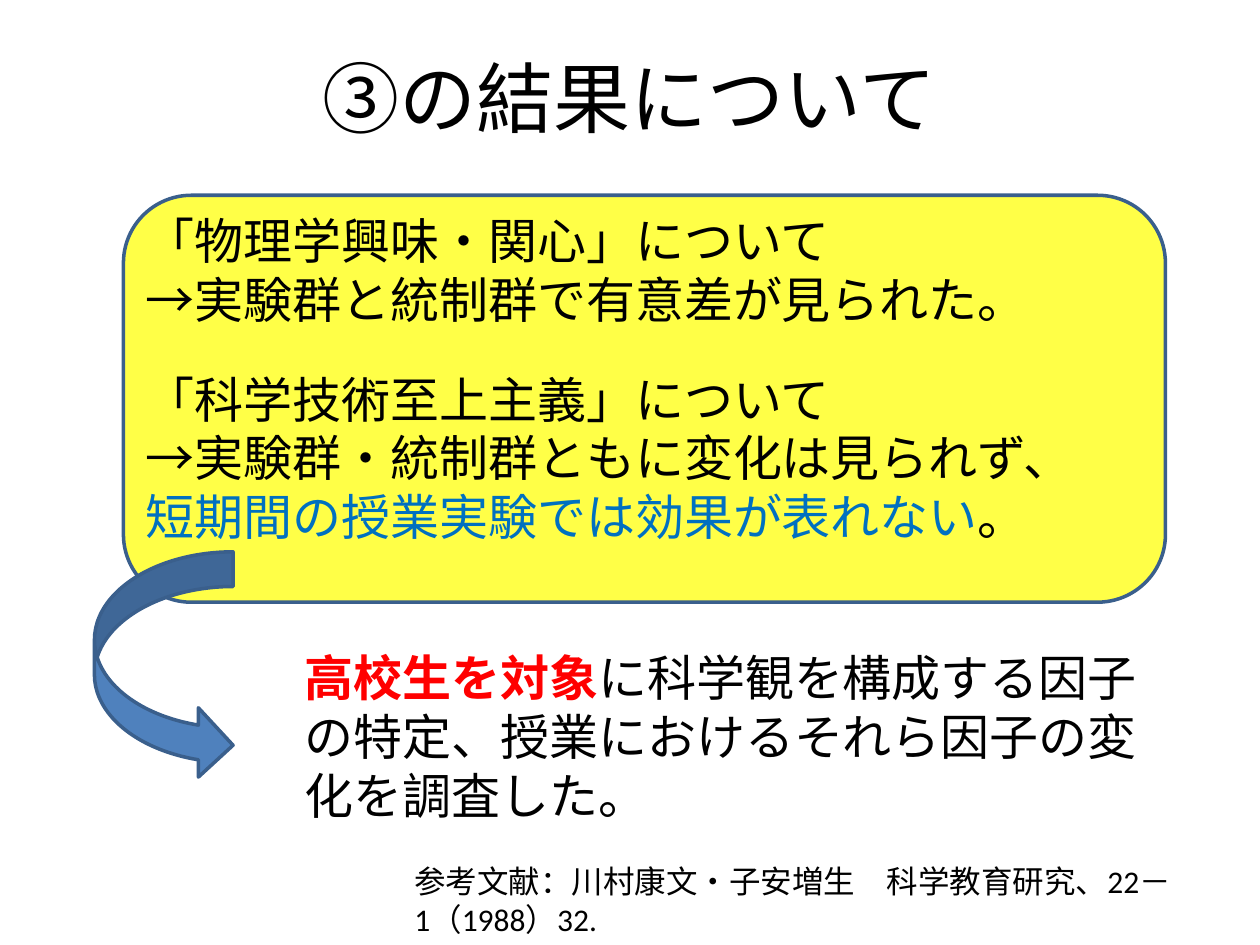
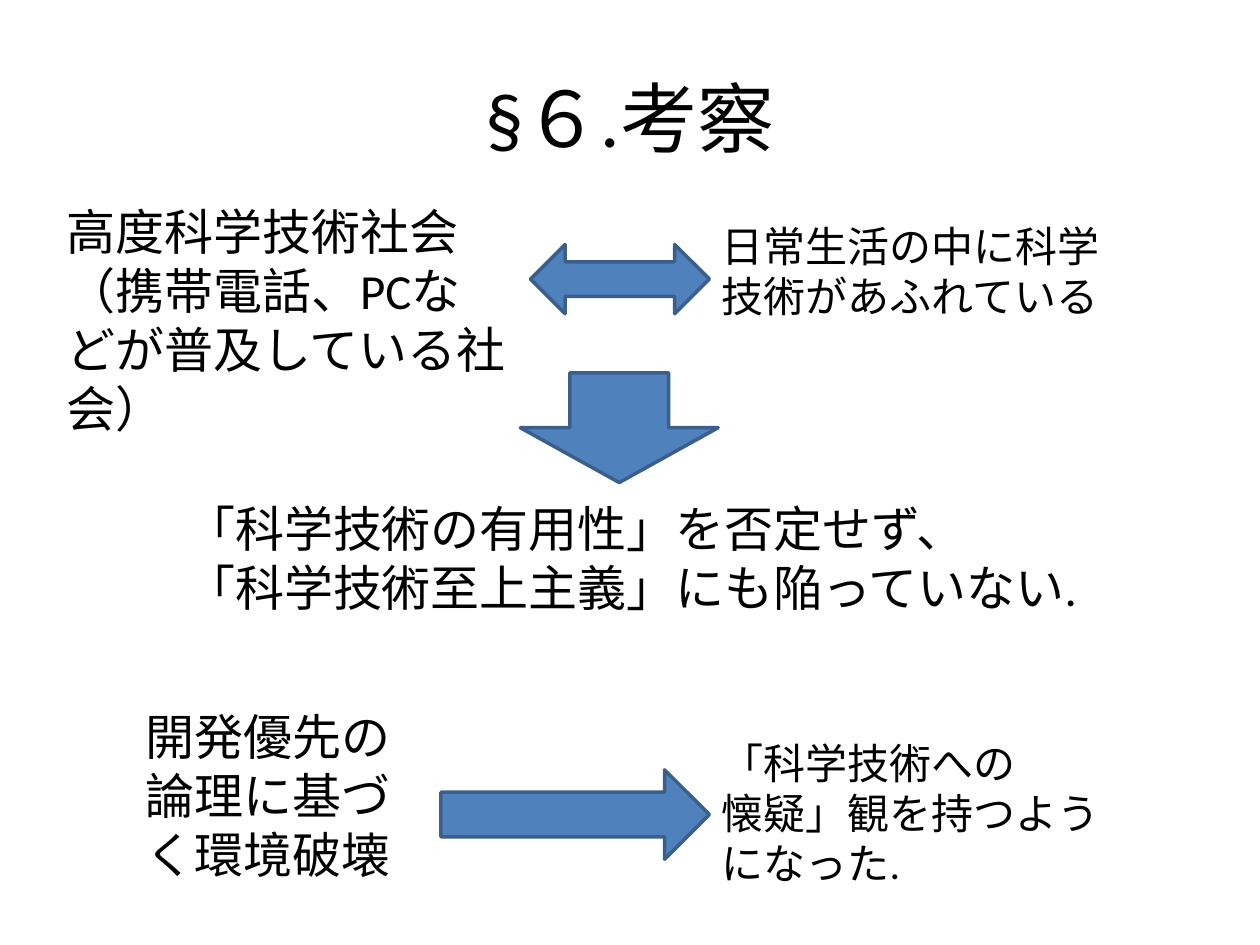
"""Build two slides on the survey results and their discussion."""
from typing import NamedTuple, Optional

from lxml.etree import SubElement
from pptx import Presentation
from pptx.dml.color import RGBColor
from pptx.enum.shapes import MSO_SHAPE as SHAPE
from pptx.enum.text import MSO_ANCHOR as ANCHOR, MSO_AUTO_SIZE as AUTO, PP_ALIGN as ALIGN
from pptx.oxml.ns import qn
from pptx.slide import Slide
from pptx.util import Inches, Pt

BLACK = RGBColor(0x00, 0x00, 0x00)
YELLOW = RGBColor(0xFF, 0xFF, 0x00)
RED = RGBColor(0xFF, 0x00, 0x00)
BLUE = RGBColor(0x00, 0x70, 0xC0)
ARROW_FILL = RGBColor(0x4F, 0x81, 0xBD)
OUTLINE = RGBColor(0x3A, 0x5F, 0x8C)

FONT = "Calibri"
TITLE_SIZE, BODY_SIZE, SIDE_SIZE, NOTE_SIZE = 44, 28, 24, 18
COLUMNS, ROWS = 100, 75
SLIDE_W, SLIDE_H = Inches(10), Inches(7.5)


class Box(NamedTuple):
    """Place on the grid, in columns and rows."""
    col: float
    row: float
    cols: float
    rows: float

    def emu(self) -> tuple[int, int, int, int]:
        """Return left, top, width and height as slide lengths."""
        cw, rh = SLIDE_W / COLUMNS, SLIDE_H / ROWS
        return (round(self.col * cw), round(self.row * rh),
                round(self.cols * cw), round(self.rows * rh))


class Span(NamedTuple):
    """Stretch of text in one style."""
    text: str
    color: RGBColor = BLACK
    bold: bool = False


class Block(NamedTuple):
    """Text box holding paragraphs of spans."""
    box: Box
    paragraphs: list[list[Span]]
    size: int = BODY_SIZE


class Figure(NamedTuple):
    """Outlined preset shape."""
    kind: SHAPE
    box: Box
    fill: RGBColor = ARROW_FILL
    opacity: Optional[int] = None


class Page(NamedTuple):
    """Title and the items below it, from back to front."""
    title: str
    title_box: Box
    items: list[Block | Figure]


def plain(*lines: str) -> list[list[Span]]:
    """Turn each line into a paragraph in the default style."""
    return [[Span(line)] for line in lines]


PAGES = [
    Page("③の結果について", Box(5, 3, 90, 9.3), [
        Figure(SHAPE.ROUNDED_RECTANGLE, Box(9.8, 15.5, 82.7, 32.3), YELLOW, 72),
        Block(Box(10.6, 16.2, 76.4, 10.4),
              plain("「物理学興味・関心」について", "→実験群と統制群で有意差が見られた。")),
        Block(Box(10.6, 28.8, 76.4, 15.1), [
            [Span("「科学技術至上主義」について")],
            [Span("→実験群・統制群ともに変化は見られず、"),
             Span("短期間の授業実験では効果が表れない", BLUE), Span("。")],
        ]),
        Block(Box(31.9, 67.9, 63, 7.1),
              plain("参考文献：川村康文・子安増生　科学教育研究、22－1（1988）32."), NOTE_SIZE),
        Figure(SHAPE.CURVED_RIGHT_ARROW, Box(7.5, 43.8, 11, 18.1)),
        Block(Box(23.2, 50.9, 68.5, 15.1), [
            [Span("高校生を対象", RED, True),
             Span("に科学観を構成する因子の特定、授業におけるそれら因子の変化を調査した。")],
        ]),
    ]),
    Page("§６.考察", Box(5, 3, 90, 12.5), [
        Block(Box(4.3, 15.5, 37, 15.1),
              plain("高度科学技術社会（携帯電話、PCなどが普及している社会）")),
        Block(Box(56.3, 17, 33.9, 9.1),
              plain("日常生活の中に科学技術があふれている"), SIDE_SIZE),
        Block(Box(13.8, 39.1, 74.8, 10.4),
              plain("「科学技術の有用性」を否定せず、", "「科学技術至上主義」にも陥っていない.")),
        Figure(SHAPE.LEFT_RIGHT_ARROW, Box(42.1, 19.4, 14.2, 5.5)),
        Figure(SHAPE.DOWN_ARROW, Box(41.3, 29.6, 15.7, 8.7)),
        Block(Box(10.6, 55.6, 24.4, 15.1), plain("開発優先の論理に基づく環境破壊")),
        Figure(SHAPE.RIGHT_ARROW, Box(35, 61.1, 21.3, 7.1)),
        Block(Box(56.3, 58, 34.6, 13.1),
              plain("「科学技術への", "懐疑」観を持つようになった."), SIDE_SIZE),
    ]),
]


def draw_block(s: Slide, block: Block):
    """Add a wrapping text box and return its text frame."""
    tf = s.shapes.add_textbox(*block.box.emu()).text_frame
    tf.word_wrap = True
    tf.auto_size = AUTO.SHAPE_TO_FIT_TEXT
    for i, spans in enumerate(block.paragraphs):
        p = tf.add_paragraph() if i else tf.paragraphs[0]
        for span in spans:
            r = p.add_run()
            r.text = span.text
            r.font.name = FONT
            r.font.size = Pt(block.size)
            r.font.bold = span.bold
            r.font.color.rgb = span.color
    return tf


def draw_title(s: Slide, page: Page) -> None:
    """Add the centred title."""
    tf = draw_block(s, Block(page.title_box, plain(page.title), TITLE_SIZE))
    tf.auto_size = AUTO.NONE
    tf.vertical_anchor = ANCHOR.MIDDLE
    tf.paragraphs[0].alignment = ALIGN.CENTER


def draw_figure(s: Slide, figure: Figure) -> None:
    """Add a filled shape with the shared outline."""
    sp = s.shapes.add_shape(figure.kind, *figure.box.emu())
    sp.shadow.inherit = False
    sp.fill.solid()
    sp.fill.fore_color.rgb = figure.fill
    sp.line.color.rgb = OUTLINE
    sp.line.width = Pt(2)
    if figure.opacity is not None:
        color = sp.fill._xPr.find(qn("a:solidFill")).find(qn("a:srgbClr"))
        SubElement(color, qn("a:alpha"), val=str(figure.opacity * 1000))


def main() -> None:
    """Draw every page and save the file."""
    prs = Presentation()
    prs.slide_width, prs.slide_height = SLIDE_W, SLIDE_H
    for page in PAGES:
        s = prs.slides.add_slide(prs.slide_layouts[6])
        draw_title(s, page)
        for item in page.items:
            if isinstance(item, Block):
                draw_block(s, item)
            else:
                draw_figure(s, item)
    prs.save("out.pptx")


if __name__ == "__main__":
    main()
